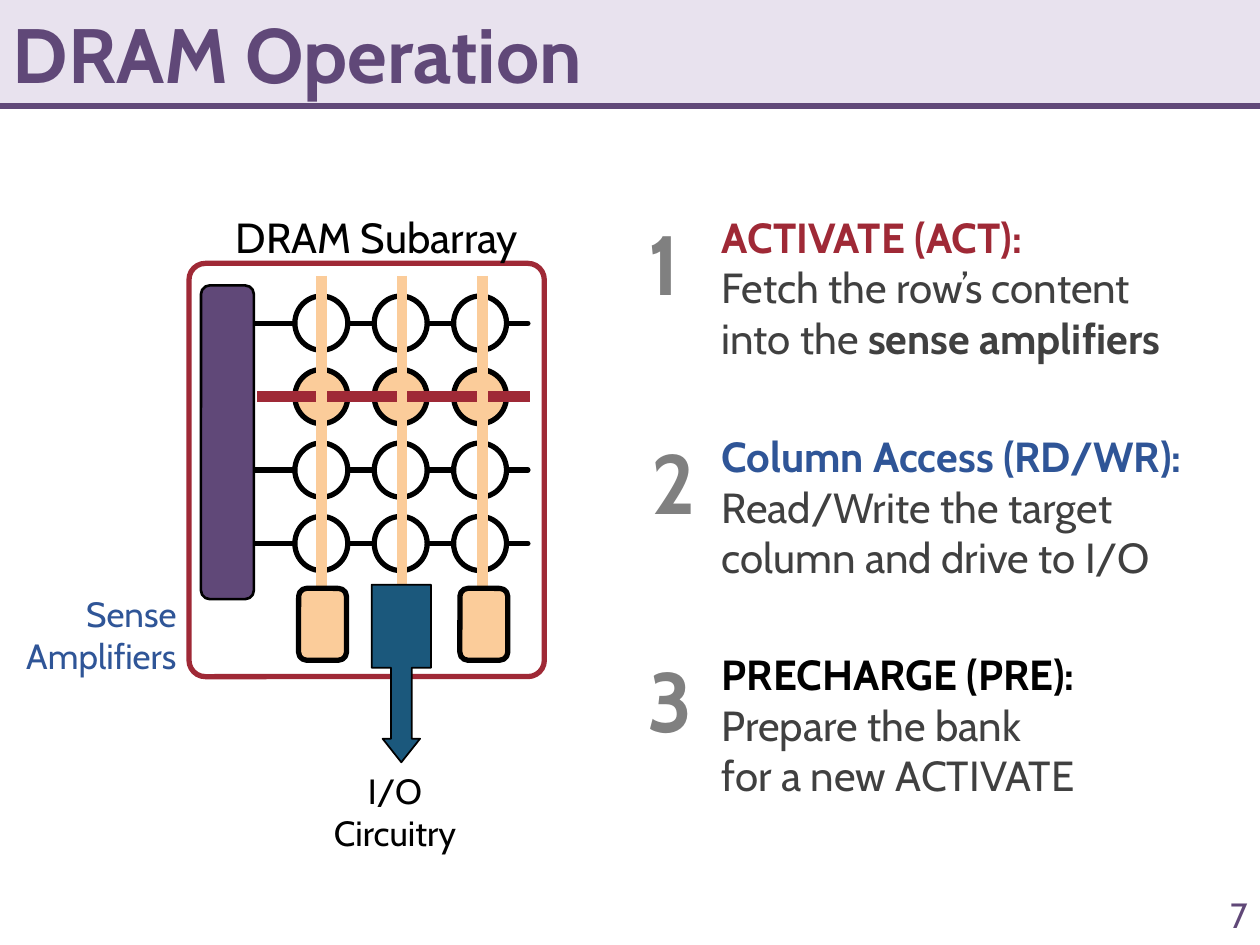
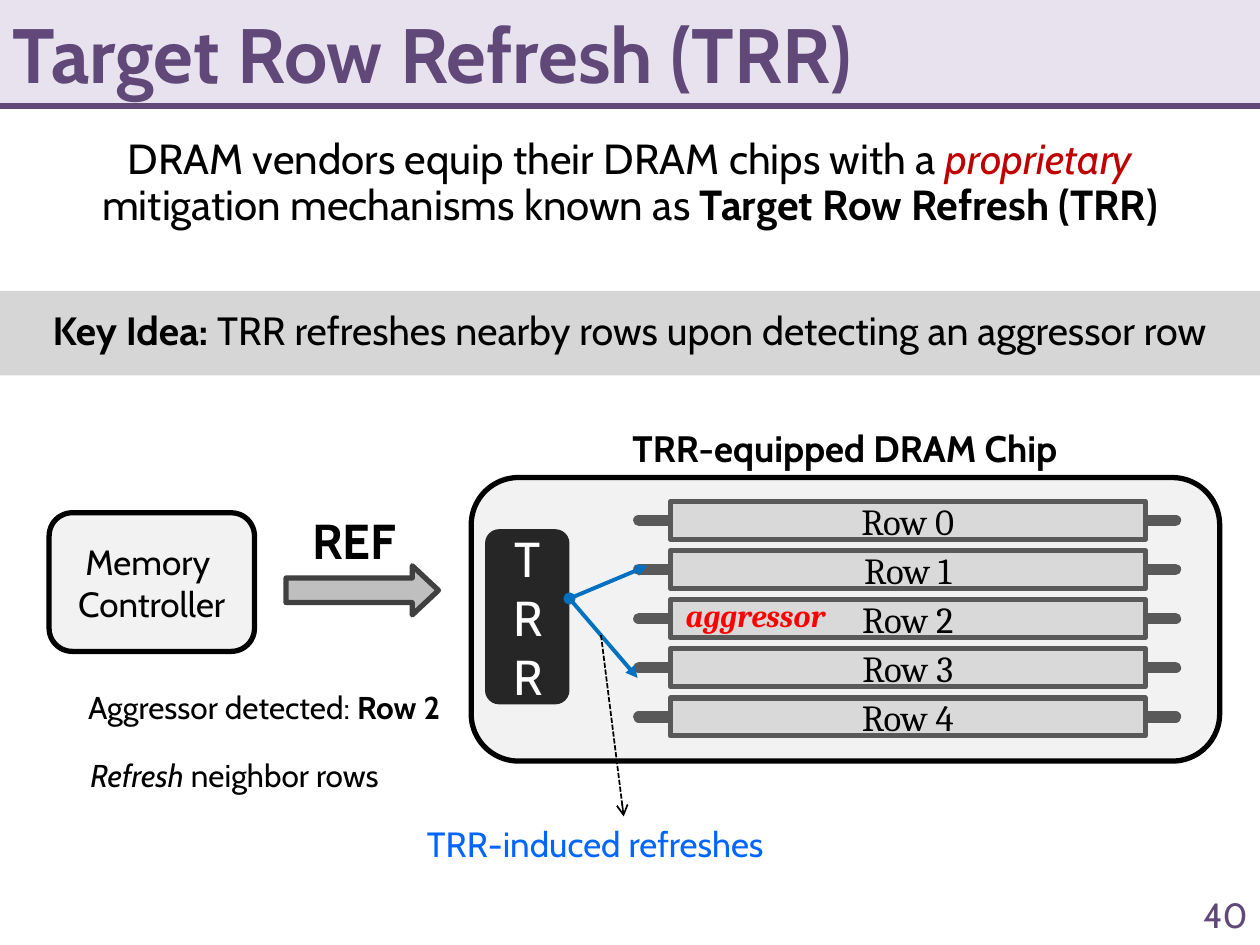
from typing import NamedTuple, Optional, Sequence, Union

from lxml.etree import SubElement
from pptx import Presentation
from pptx.dml.color import RGBColor
from pptx.enum.dml import MSO_LINE as Dash
from pptx.enum.shapes import MSO_CONNECTOR as Link, MSO_SHAPE as Kind
from pptx.enum.text import MSO_ANCHOR as Anchor, MSO_AUTO_SIZE as Fit, PP_ALIGN as Align
from pptx.oxml.ns import qn
from pptx.util import Inches, Pt

# Grid: 100 columns by 75 rows
COLS, ROWS = 100, 75
WIDE, HIGH = Inches(10), Inches(7.5)
SANS, SERIF = "Cabin", "Cambria"
BLACK, WHITE, PURPLE, LILAC = "000000", "FFFFFF", "604878", "E8E2EE"
RED, TAN, NAVY, TEAL = "9F2936", "FBCC9A", "2F5597", "1B587C"
DARK, GREY, PALE, BLUE = "404040", "595959", "F2F2F2", "0070C0"
LEFT, MID, RIGHT = Align.LEFT, Align.CENTER, Align.RIGHT


class Box(NamedTuple):
    x: float
    y: float
    w: float
    h: float


class Run(NamedTuple):
    text: str
    hue: str = ""
    bold: Optional[bool] = None
    italic: Optional[bool] = None


class Style(NamedTuple):
    size: float = 20
    hue: str = BLACK
    bold: bool = False
    italic: bool = False
    face: str = SANS
    align: Align = LEFT
    lead: Optional[float] = None


class Step(NamedTuple):
    num: str
    x: float
    y: float
    name: str
    hue: str
    body: Sequence[Run]


class Pen(NamedTuple):
    hue: str
    width: float
    cap: str = "flat"
    head: str = ""
    tail: str = ""
    dash: Optional[Dash] = None


Text = Union[str, Sequence[Run]]


# Basic helpers
def tint(hue: str) -> RGBColor:
    return RGBColor.from_string(hue)


def across(n: float) -> int:
    return round(WIDE * n / COLS)


def down(n: float) -> int:
    return round(HIGH * n / ROWS)


def place(box: Box) -> tuple:
    return across(box.x), down(box.y), across(box.w), down(box.h)


def write(par, text: Text, style: Style) -> None:
    par.alignment = style.align
    par.space_before = Pt(0)
    if style.lead:
        par.line_spacing = style.lead
    font = par.font
    font.size, font.name = Pt(style.size), style.face
    font.bold, font.italic = style.bold, style.italic
    font.color.rgb = tint(style.hue)
    for part in [Run(text)] if isinstance(text, str) else text:
        for i, line in enumerate(part.text.split("\n")):
            if i:
                par.add_line_break()
            if not line:
                continue
            run = par.add_run()
            run.text = line
            if part.bold is not None:
                run.font.bold = part.bold
            if part.italic is not None:
                run.font.italic = part.italic
            if part.hue:
                run.font.color.rgb = tint(part.hue)


def label(slide, box: Box, text: Text, style: Style, anchor: Anchor = Anchor.TOP):
    frame = slide.shapes.add_textbox(*place(box)).text_frame
    frame.word_wrap = True
    frame.vertical_anchor = anchor
    write(frame.paragraphs[0], text, style)
    return frame


def block(slide, kind: Kind, box: Box, fill: str, edge: str = "", width: float = 3,
          adj: Sequence[float] = ()):
    shape = slide.shapes.add_shape(kind, *place(box))
    shape.shadow.inherit = False
    shape.fill.solid()
    shape.fill.fore_color.rgb = tint(fill)
    if edge:
        shape.line.color.rgb = tint(edge)
        shape.line.width = Pt(width)
    else:
        shape.line.fill.background()
    for i, value in enumerate(adj):
        shape.adjustments[i] = value
    return shape


def inside(shape, text: Text, style: Style, pad: float = 0.7) -> None:
    frame = shape.text_frame
    frame.word_wrap = True
    frame.vertical_anchor = Anchor.MIDDLE
    frame.margin_left = frame.margin_right = across(pad)
    frame.margin_top = frame.margin_bottom = 0
    write(frame.paragraphs[0], text, style)


def wire(slide, x1: float, y1: float, x2: float, y2: float, pen: Pen):
    line = slide.shapes.add_connector(
        Link.STRAIGHT, across(x1), down(y1), across(x2), down(y2))
    line.line.color.rgb = tint(pen.hue)
    line.line.width = Pt(pen.width)
    if pen.dash:
        line.line.dash_style = pen.dash
    props = line.element.spPr
    ln = props.find(qn("a:ln"))
    ln.set("cap", pen.cap)
    for tag, end in (("a:headEnd", pen.head), ("a:tailEnd", pen.tail)):
        if end:
            SubElement(ln, qn(tag), type=end)
    SubElement(props, qn("a:effectLst"))
    return line


# Shared frame: band, rule, title and page number
def start(deck, layout: int, title: str, page: str):
    slide = deck.slides.add_slide(deck.slide_layouts[layout])
    head = slide.shapes.title
    band = Box(0, 0, COLS, 8.4)
    back = block(slide, Kind.RECTANGLE, band, LILAC)
    rule = wire(slide, 0, band.h, COLS, band.h, Pen(PURPLE, 3.5))
    for part in (back, rule):
        head.element.addprevious(part.element)
    head.left, head.top, head.width, head.height = place(band)
    frame = head.text_frame
    frame.auto_size = Fit.NONE
    frame.vertical_anchor = Anchor.MIDDLE
    write(frame.paragraphs[0], title, Style(44, PURPLE, True))
    frame.paragraphs[0].space_after = Pt(6)
    label(slide, Box(89.2, 70.6, 10.8, 4), page,
          Style(20, PURPLE, align=RIGHT), Anchor.MIDDLE)
    return slide


def draw_array(slide) -> None:
    # Cells on word lines
    block(slide, Kind.ROUNDED_RECTANGLE, Box(15, 20.9, 28.2, 32.8), WHITE, RED, adj=[0.046])
    cols = [25.5 + 6.3 * i for i in range(3)]
    rows = [25.65 + 5.83 * i for i in range(4)]
    live = rows[1]
    for y in rows:
        if y != live:
            wire(slide, 20.1, y, 41.9, y, Pen(BLACK, 3, "rnd"))
        for x in cols:
            block(slide, Kind.OVAL, Box(x - 2.1, y - 2.15, 4.2, 4.3),
                  TAN if y == live else WHITE, BLACK)
    block(slide, Kind.ROUNDED_RECTANGLE, Box(15.95, 22.65, 4.2, 24.9), PURPLE, BLACK, 1.5)

    # Active row, bit lines and sense amplifiers
    wire(slide, 20.4, live, 42.1, live, Pen(RED, 6))
    lanes = [25.5 + 6.4 * i for i in range(3)]
    for x in lanes:
        wire(slide, x, 21.9, x, 46.7, Pen(TAN, 6))
    for x in lanes[::2]:
        block(slide, Kind.ROUNDED_RECTANGLE, Box(x - 1.8, 46.7, 3.8, 5.7), TAN, BLACK)
    drive = block(slide, Kind.RIGHT_ARROW_CALLOUT, Box(24.8, 51.1, 14.1, 4.7), TEAL,
                  BLACK, 1, [0.348, 0.316, 0.398, 0.468])
    drive.rotation = 90

    # Names
    label(slide, Box(12.3, 16.3, 35.2, 5), "DRAM Subarray", Style(24, align=MID))
    side = Style(20, NAVY, align=RIGHT)
    frame = label(slide, Box(0, 46.5, 15, 7.7), "Sense", side)
    write(frame.add_paragraph(), "Amplifiers", side)
    label(slide, Box(23.5, 60.6, 15.7, 7.7), "I/O Circuitry", Style(20, align=MID))


def draw_steps(slide) -> None:
    steps = [
        Step("1", 50.5, 16.3, "ACTIVATE (ACT):", RED,
             [Run("Fetch the row’s content\ninto the "), Run("sense amplifiers", bold=True)]),
        Step("2", 50.7, 33.7, "Column Access (RD/WR):", NAVY,
             [Run("Read/Write the target\ncolumn and drive to I/O")]),
        Step("3", 50.4, 51, "PRECHARGE (PRE):", BLACK,
             [Run("Prepare the bank\nfor a new ACTIVATE")]),
    ]
    for step in steps:
        frame = label(slide, Box(56.3, step.y, 39.4, 13.1), step.name,
                      Style(24, step.hue, True))
        write(frame.add_paragraph(), step.body, Style(24, DARK))
        label(slide, Box(step.x, step.y, 5.7, 9.1), step.num, Style(48, "808080", True))


def draw_intro(slide) -> None:
    body = slide.placeholders[1]
    body.left, body.top, body.width, body.height = place(Box(0, 10.5, COLS, 8.4))
    frame = body.text_frame
    frame.auto_size = Fit.NONE
    par = frame.paragraphs[0]
    props = par._p.get_or_add_pPr()
    props.set("marL", "0")
    props.set("indent", "0")
    SubElement(props, qn("a:buNone"))
    write(par, [Run("DRAM vendors equip their DRAM chips with a "),
                Run("proprietary\n", "C00000", italic=True),
                Run("mitigation mechanisms known as "),
                Run("Target Row Refresh (TRR)", bold=True)],
          Style(24, align=MID, lead=0.9))
    idea = block(slide, Kind.RECTANGLE, Box(0, 23.1, COLS, 6.7), "D6D6D6")
    inside(idea, [Run("Key Idea:", bold=True),
                  Run(" TRR refreshes nearby rows upon detecting an aggressor row")],
           Style(22.5, align=MID, lead=0.9))


def draw_chip(slide) -> None:
    # Chip with its rows
    block(slide, Kind.ROUNDED_RECTANGLE, Box(37.4, 37.9, 59.4, 22.5), PALE, BLACK)
    for i in range(5):
        bar = Box(53.2, 39.8 + 3.9 * i, 37.7, 3)
        y = bar.y + bar.h / 2
        wire(slide, 50.7, y, 93.3, y, Pen(GREY, 6.5, "rnd"))
        inside(block(slide, Kind.RECTANGLE, bar, "D9D9D9", GREY), f"Row {i}",
               Style(21, face=SERIF, align=MID))
    label(slide, Box(38.3, 33.3, 57.5, 4.5), "TRR-equipped DRAM Chip",
          Style(21, bold=True, align=MID))
    unit = block(slide, Kind.ROUNDED_RECTANGLE, Box(38.5, 42, 6.7, 13.9), "262626")
    inside(unit, "TRR", Style(28, WHITE, align=MID), pad=1.9)
    label(slide, Box(52.6, 46.9, 14.7, 4.2), "aggressor",
          Style(18, "FF0000", True, True, SERIF, MID, 0.9), Anchor.MIDDLE)

    # Controller and command
    host = block(slide, Kind.ROUNDED_RECTANGLE, Box(3.9, 40.7, 16.3, 11), PALE, BLACK)
    inside(host, "Memory \nController", Style(20, align=MID))
    block(slide, Kind.RIGHT_ARROW, Box(22.7, 44.9, 12.1, 3.9), "BFBFBF", DARK,
          adj=[0.5, 0.533])
    label(slide, Box(23, 40, 10.2, 5.7), "REF", Style(28, bold=True, align=MID),
          Anchor.MIDDLE)

    # Refreshes
    for x, y in ((51.4, 44.9), (50.6, 53.8)):
        wire(slide, 45.2, 47.5, x, y, Pen(BLUE, 2.25, head="oval", tail="triangle"))
    wire(slide, 47.7, 50.4, 49.5, 64.8, Pen(BLACK, 1, tail="arrow", dash=Dash.SQUARE_DOT))
    label(slide, Box(32.9, 64.8, 33.1, 4.4), "TRR-induced refreshes", Style(20, "0066FF"))
    label(slide, Box(6, 54.1, 31.9, 4),
          [Run("Aggressor detected: "), Run("Row 2", bold=True)], Style(18))
    label(slide, Box(6.2, 59.5, 26, 4),
          [Run("Refresh", italic=True), Run(" neighbor rows")], Style(18))


def main() -> None:
    deck = Presentation()
    deck.slide_width, deck.slide_height = WIDE, HIGH

    slide = start(deck, 5, "DRAM Operation", "7")
    draw_array(slide)
    draw_steps(slide)

    slide = start(deck, 1, "Target Row Refresh (TRR)", "40")
    draw_intro(slide)
    draw_chip(slide)

    deck.save("out.pptx")


if __name__ == "__main__":
    main()
